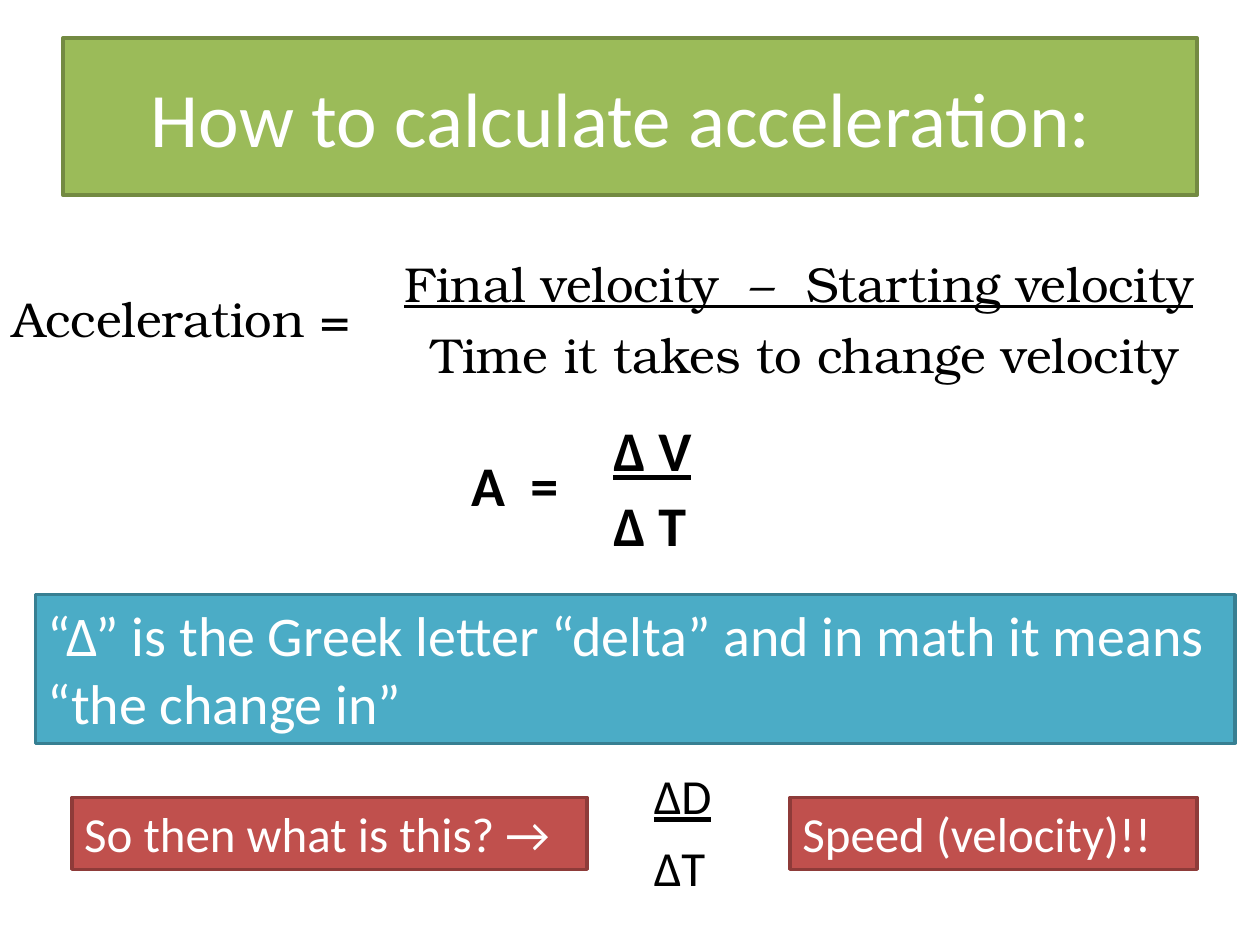
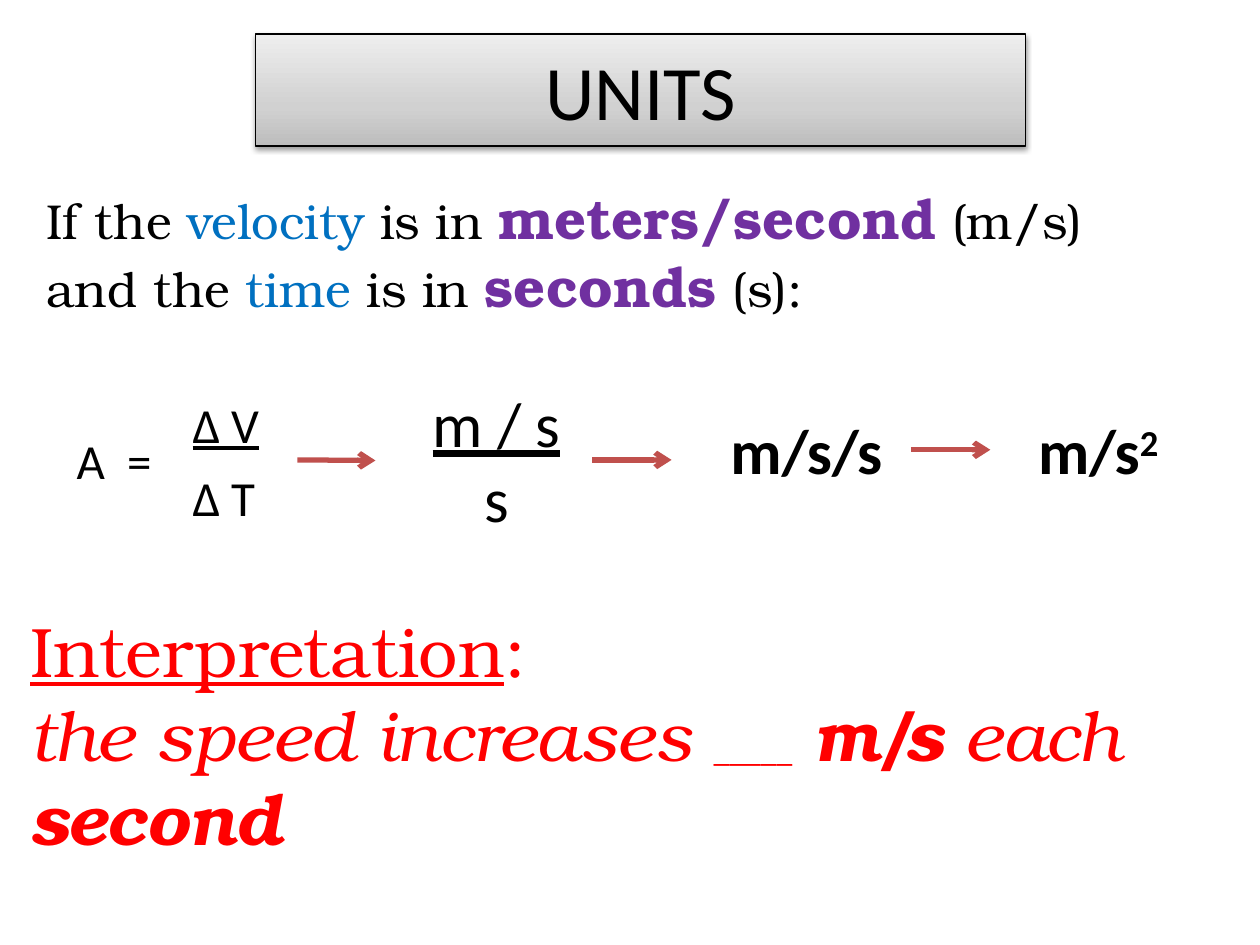
from copy import deepcopy

from lxml.etree import SubElement
from pptx import Presentation
from pptx.dml.color import RGBColor
from pptx.enum.shapes import MSO_CONNECTOR, MSO_SHAPE
from pptx.enum.text import MSO_ANCHOR, MSO_AUTO_SIZE, PP_ALIGN
from pptx.oxml.ns import qn
from pptx.util import Inches, Pt

SANS, SERIF = "Calibri", "TeX Gyre Bonum"
BLACK, WHITE, RED = "000000", "FFFFFF", "FF0000"
BLUE, PURPLE = "0070C0", "7030A0"
GREEN_BOX = ("9BBB59", "738A42")
TEAL_BOX = ("4BACC6", "377F92")
BRICK_BOX = ("C0504D", "8E3B39")
TITLE = {"size": 44}
BODY = {"size": 28}
SERIF_BODY = {"size": 28, "name": SERIF}
BOLD_FORMULA = {"size": 32, "bold": True}
UNIT = {"size": 36}
UNDERLINED = {"underline": True}
BOLD = {"bold": True}


def rgb(code):
    return RGBColor.from_string(code)


def place(at):
    return [Inches(length) for length in at]


def add_span(para, text, style):
    span = para.add_run()
    span.text = text
    values = {"name": SANS, "color": BLACK} | style
    for key, value in values.items():
        if key == "color":
            span.font.color.rgb = rgb(value)
        elif key == "baseline":
            span.font._element.set("baseline", str(value))
        else:
            setattr(span.font, key, Pt(value) if key == "size" else value)


def write(box, paragraphs, style, align=PP_ALIGN.LEFT, anchor=MSO_ANCHOR.TOP):
    """Fill a box; each paragraph is a list of (text, changes to style) spans."""
    frame = box.text_frame
    frame.word_wrap = True
    frame.vertical_anchor = anchor
    if anchor == MSO_ANCHOR.TOP:
        frame.auto_size = MSO_AUTO_SIZE.SHAPE_TO_FIT_TEXT
    for index, spans in enumerate(paragraphs):
        para = frame.add_paragraph() if index else frame.paragraphs[0]
        para.alignment = align
        for text, changes in spans:
            add_span(para, text, style | changes)


def add_text(parent, at, paragraphs, style, align=PP_ALIGN.LEFT):
    box = parent.shapes.add_textbox(*place(at))
    write(box, paragraphs, style, align)
    return box


def add_formula(page, style, parts):
    """Group the left side, numerator and denominator of an equation."""
    group = page.shapes.add_group_shape()
    for at, text, changes in parts:
        add_text(group, at, [[(text, changes)]], style)


def add_rectangle(page, at, line, width):
    box = page.shapes.add_shape(MSO_SHAPE.RECTANGLE, *place(at))
    box.shadow.inherit = False
    box.line.color.rgb = rgb(line)
    box.line.width = Pt(width)
    return box


def add_panel(page, at, colors, text, style, **layout):
    fill, line = colors
    box = add_rectangle(page, at, line, 2)
    box.fill.solid()
    box.fill.fore_color.rgb = rgb(fill)
    write(box, [[(text, {"color": WHITE})]], style, **layout)


def add_gradient(box, stops):
    """Fill from bottom to top with (position, color) stops."""
    box.fill.gradient()
    box.fill.gradient_angle = 90
    stop_list = box._element.spPr.find(".//" + qn("a:gsLst"))
    while len(stop_list) < len(stops):
        stop_list.append(deepcopy(stop_list[0]))
    for stop, (position, color) in zip(box.fill.gradient_stops, stops):
        stop.position = position
        stop.color.rgb = rgb(color)


def add_shadow(box):
    effects = box._element.spPr.find(qn("a:effectLst"))
    shadow = SubElement(effects, qn("a:outerShdw"), blurRad=str(Pt(3.1)),
                        dist=str(Pt(1.6)), dir="5400000", rotWithShape="0")
    color = SubElement(shadow, qn("a:srgbClr"), val=BLACK)
    SubElement(color, qn("a:alpha"), val="38000")


def add_arrow(page, left, top, width=0.63):
    arrow = page.shapes.add_connector(
        MSO_CONNECTOR.STRAIGHT, *place((left, top, left + width, top)))
    arrow.line.color.rgb = rgb(BRICK_BOX[0])
    arrow.line.width = Pt(3)
    SubElement(arrow.line._get_or_add_ln(), qn("a:tailEnd"), type="arrow")
    SubElement(arrow._element.spPr, qn("a:effectLst"))
    return arrow


def build_calculation(page):
    add_panel(page, (0.5, 0.3, 9, 1.25), GREEN_BOX,
              "How to calculate acceleration: ", TITLE,
              align=PP_ALIGN.CENTER, anchor=MSO_ANCHOR.MIDDLE)
    add_formula(page, SERIF_BODY, [
        ((0, 2.24, 3.09, 0.57), "Acceleration =", {}),
        ((3.11, 1.96, 6.94, 0.57), "Final velocity  –  Starting velocity", UNDERLINED),
        ((3.33, 2.53, 6.5, 0.57), "Time it takes to change velocity", {}),
    ])
    add_formula(page, BOLD_FORMULA, [
        ((3.64, 3.53, 1.01, 0.64), "A  =", {}),
        ((4.77, 3.25, 1.39, 0.64), "Δ V", UNDERLINED),
        ((4.77, 3.84, 0.9, 0.64), "Δ T", {}),
    ])
    add_panel(page, (0.28, 4.72, 9.52, 1.18), TEAL_BOX,
              "“Δ” is the Greek letter “delta” and in math it means “the change in”",
              {"size": 32})
    add_formula(page, BODY, [
        ((5.09, 6.03, 1.28, 0.57), "ΔD", UNDERLINED),
        ((5.09, 6.6, 0.88, 0.57), "ΔT", {}),
    ])
    for left, width, text in [(0.57, 4.09, "So then what is this? →"),
                              (6.27, 3.23, "Speed (velocity)!!")]:
        add_panel(page, (left, 6.33, width, 0.57), BRICK_BOX, text, BODY)


def build_units(page):
    title = add_rectangle(page, (2.03, 0.27, 6.11, 0.89), BLACK, 0.75)
    add_gradient(title, [(0, "BDBDBD"), (0.35, "D1D1D1"), (1, "EEEEEE")])
    add_shadow(title)
    write(title, [[("UNITS", {})]], TITLE, PP_ALIGN.CENTER, MSO_ANCHOR.MIDDLE)

    quantity = {"color": BLUE}
    unit_name = {"size": 32, "color": PURPLE, "bold": True}
    add_text(page, (0.27, 1.41, 8.86, 1.18), [
        [("If the ", {}), ("velocity", quantity), (" is in ", {}),
         ("meters/second", unit_name), (" (m/s)", {})],
        [("and the ", {}), ("time", quantity), (" is in ", {}),
         ("seconds", unit_name), (" (s):", {})],
    ], SERIF_BODY)

    add_formula(page, BODY, [
        ((0.51, 3.37, 0.82, 0.57), "A  =", {}),
        ((1.43, 3.08, 1.13, 0.57), "Δ V", UNDERLINED),
        ((1.43, 3.66, 0.73, 0.57), "Δ T", {}),
    ])
    unit_fraction = add_text(page, (2.98, 3, 1.92, 1.31),
                             [[("m / s", UNDERLINED)], [("s", {})]],
                             UNIT, PP_ALIGN.CENTER)
    add_text(page, (5.44, 3.22, 1.92, 0.71), [[("m/s/s", BOLD)]],
             UNIT, PP_ALIGN.CENTER)
    add_text(page, (8.14, 3.22, 1.34, 0.71),
             [[("m/s", BOLD), ("2", BOLD | {"baseline": 30000})]], UNIT)
    add_arrow(page, 2.36, 3.65).end_connect(unit_fraction, 1)
    add_arrow(page, 4.7, 3.65)
    add_arrow(page, 7.23, 3.57)

    italic = {"italic": True}
    strong = italic | BOLD
    add_text(page, (0.14, 4.77, 9.62, 2.12), [
        [("Interpretation", UNDERLINED), (":", {})],
        [("the speed increases ", italic), ("_____", italic | {"size": 18}),
         (" ", italic), ("m/s", strong), (" each ", italic), ("second", strong)],
    ], {"size": 40, "name": SERIF, "color": RED})


def main():
    deck = Presentation()
    deck.slide_width, deck.slide_height = Inches(10), Inches(7.5)
    for build in (build_calculation, build_units):
        build(deck.slides.add_slide(deck.slide_layouts[6]))
    deck.save("out.pptx")


if __name__ == "__main__":
    main()
